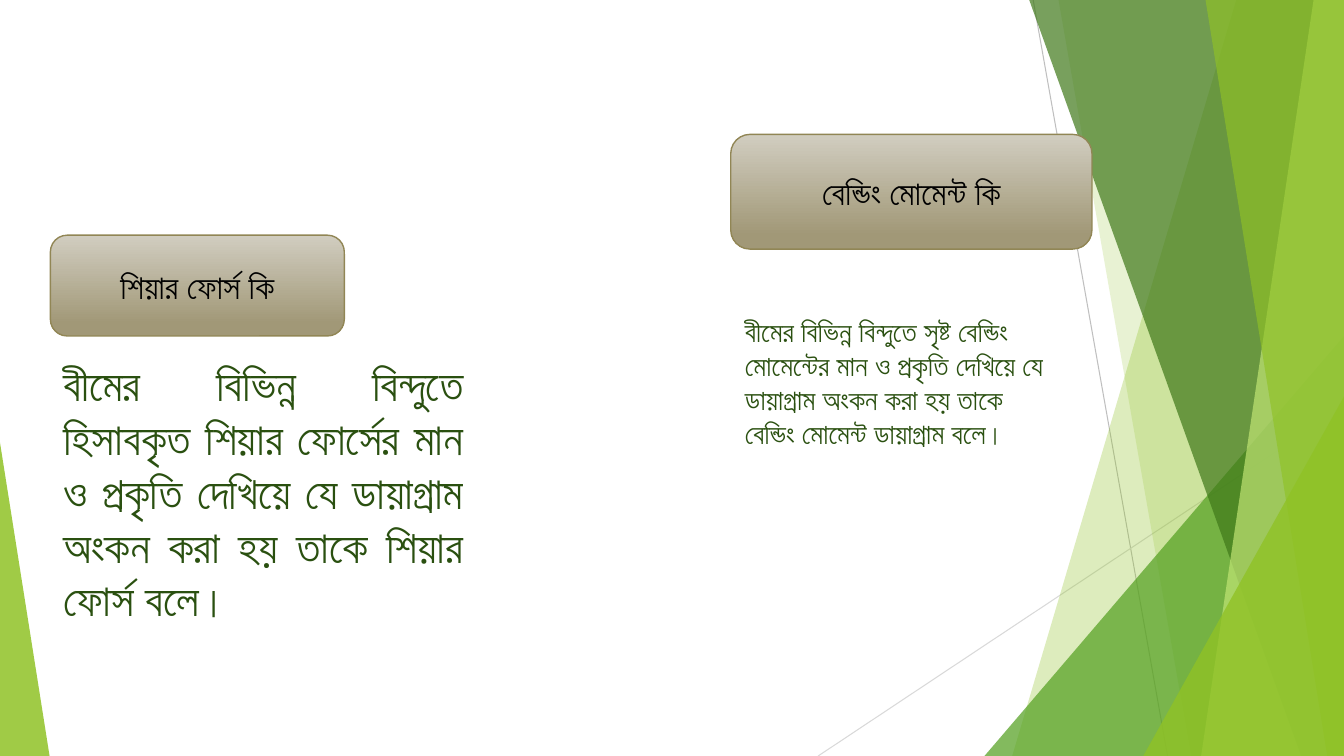
from lxml.etree import SubElement
from pptx import Presentation
from pptx.dml.color import RGBColor
from pptx.enum.shapes import MSO_CONNECTOR, MSO_SHAPE
from pptx.enum.text import MSO_ANCHOR, PP_ALIGN
from pptx.oxml.ns import qn
from pptx.util import Inches, Pt

COLS, ROWS = 160, 90
FONT = "Lato"
YA, NUKTA, YYA = map(chr, (0x9AF, 0x9BC, 0x9DF))
COLORS = {
    "lime": "90C226", "pale": "C0E474", "green": "54A021", "forest": "3F7819",
    "text": "2A5010", "black": "000000", "stone": "D1CDC0", "khaki": "A19877",
    "edge": "918655", "grey": "BFBFBF", "silver": "D9D9D9",
}

SHEAR_TITLE = "শিয়ার ফোর্স কি"
SHEAR_TEXT = ("বীমের বিভিন্ন বিন্দুতে হিসাবকৃত শিয়ার ফোর্সের মান ও প্রকৃতি "
              "দেখিয়ে যে ডায়াগ্রাম অংকন করা হয় তাকে শিয়ার ফোর্স বলে।")
BENDING_TITLE = "বেন্ডিং মোমেন্ট কি"
BENDING_TEXT = ("বীমের বিভিন্ন বিন্দুতে সৃষ্ট বেন্ডিং মোমেন্টের মান ও প্রকৃতি "
                "দেখিয়ে যে ডায়াগ্রাম অংকন করা হয় তাকে বেন্ডিং মোমেন্ট ডায়াগ্রাম বলে।")


def grid(*units):
    """Turn grid units, twelve to the inch, into lengths."""
    return [Inches(u / 12) for u in units]


def rgb(name):
    """Look up a named colour."""
    return RGBColor.from_string(COLORS[name])


def compose(text):
    """Join the letter ya and its dot into the single letter yya."""
    return text.replace(YA + NUKTA, YYA)


def tint(sp, color, opacity):
    """Fill a shape with a see-through colour and no outline."""
    sp.shadow.inherit = False
    sp.line.fill.background()
    sp.fill.solid()
    sp.fill.fore_color.rgb = rgb(color)
    clr = sp._element.spPr.find(qn("a:solidFill"))[0]
    SubElement(clr, qn("a:alpha"), val=str(opacity * 1000))


def add_ray(s, start, end, color):
    """Draw a thin straight line."""
    ray = s.shapes.add_connector(MSO_CONNECTOR.STRAIGHT, *grid(*start, *end))
    ray.line.color.rgb = rgb(color)
    ray.line.width = Pt(0.75)
    SubElement(ray._element.spPr, qn("a:effectLst"))


def add_band(s, top, bottom, color, opacity):
    """Draw a band from a slanted edge to the right side of the slide."""
    corners = [grid(*xy) for xy in ((top, -0.1), (COLS, -0.1), (COLS, ROWS), (bottom, ROWS))]
    fb = s.shapes.build_freeform(*corners[0], scale=1.0)
    fb.add_line_segments(corners[1:], close=True)
    tint(fb.convert_to_shape(), color, opacity)


def add_corner(s, left, top, width, peak, color, opacity):
    """Draw a triangle that stands on the bottom of the slide."""
    sp = s.shapes.add_shape(MSO_SHAPE.ISOSCELES_TRIANGLE, *grid(left, top, width, ROWS - top))
    sp.adjustments[0] = peak
    tint(sp, color, opacity)


def write(sp, text, size, color, align):
    """Put one paragraph, centred vertically, into a shape."""
    tf = sp.text_frame
    tf.word_wrap = True
    tf.vertical_anchor = MSO_ANCHOR.MIDDLE
    p = tf.paragraphs[0]
    p.alignment = align
    r = p.add_run()
    r.text = compose(text)
    for key, value in {"name": FONT, "size": Pt(size)}.items():
        setattr(r.font, key, value)
    r.font.color.rgb = rgb(color)
    SubElement(r.font._element, qn("a:cs"), typeface=FONT)


def add_body(s, box, text, size, align):
    """Add a paragraph of body text."""
    write(s.shapes.add_textbox(*grid(*box)), text, size, "text", align)


def add_title(s, box, text):
    """Add a rounded title box with a gradient."""
    sp = s.shapes.add_shape(MSO_SHAPE.ROUNDED_RECTANGLE, *grid(*box))
    sp.shadow.inherit = False
    sp.fill.gradient()
    sp.fill.gradient_angle = 270
    for stop, (position, color) in zip(sp.fill.gradient_stops, ((0, "stone"), (0.88, "khaki"))):
        stop.position = position
        stop.color.rgb = rgb(color)
    sp.line.color.rgb = rgb("edge")
    sp.line.width = Pt(1)
    write(sp, text, 24, "black", PP_ALIGN.CENTER)


def add_backdrop(s):
    """Draw the green facets along the slide's edges."""
    add_ray(s, (123, 0), (139, ROWS), "grey")
    add_ray(s, (COLS, 48.4), (97.4, ROWS), "silver")
    add_band(s, 147.2, 120.5, "lime", 30)
    add_band(s, 126, 141.8, "lime", 20)
    add_corner(s, 117.2, 40, 42.8, 1, "green", 72)
    add_band(s, 122.5, 154.9, "forest", 70)
    add_band(s, 156.4, 143, "pale", 70)
    add_band(s, 143.5, 158, "lime", 65)
    add_corner(s, 136.1, 47.2, 23.9, 1, "lime", 80)
    add_corner(s, 0, 52.7, 5.9, 0, "lime", 85)


def main():
    """Build the slide and save it."""
    prs = Presentation()
    prs.slide_width, prs.slide_height = grid(COLS, ROWS)
    s = prs.slides.add_slide(prs.slide_layouts[6])
    add_backdrop(s)
    add_body(s, (6.36, 43, 50, 31), SHEAR_TEXT, 32, PP_ALIGN.JUSTIFY)
    add_body(s, (87.5, 32, 38.3, 27), BENDING_TEXT, 20.3, PP_ALIGN.LEFT)
    add_title(s, (6, 28, 35, 12), SHEAR_TITLE)
    add_title(s, (87, 16, 43, 13.65), BENDING_TITLE)
    prs.save("out.pptx")


if __name__ == "__main__":
    main()
